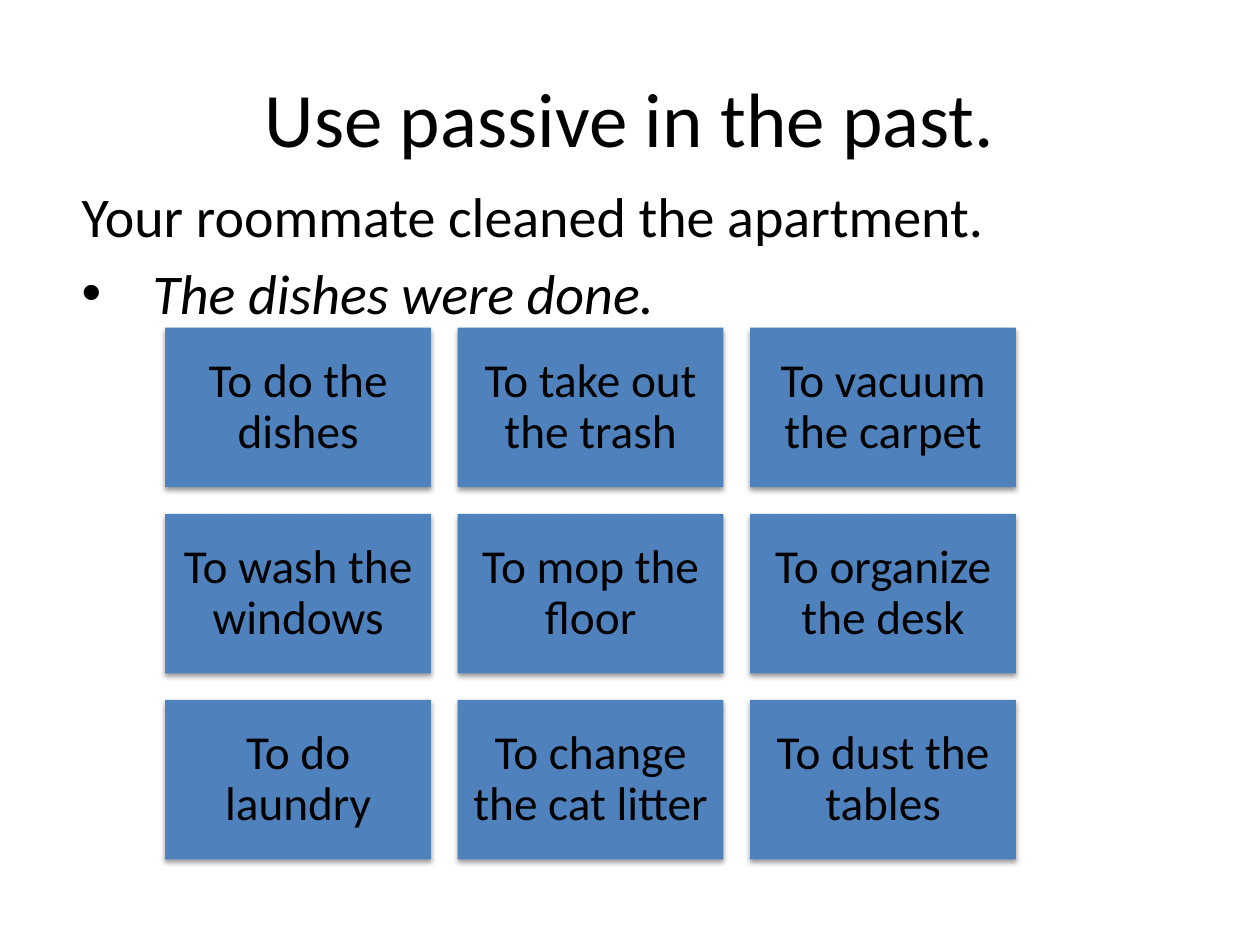
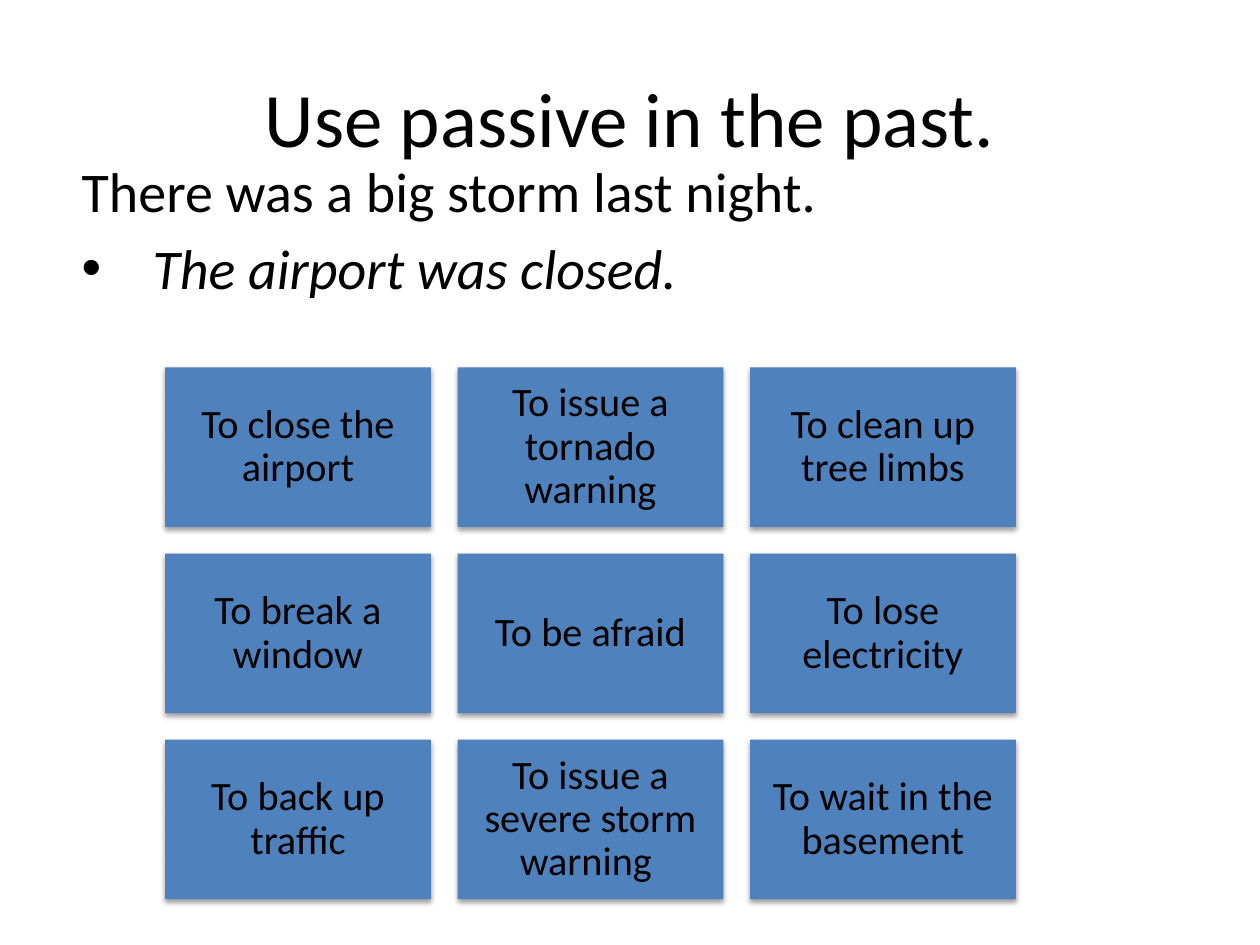
from dataclasses import dataclass

from lxml.etree import SubElement
from pptx import Presentation
from pptx.dml.color import RGBColor
from pptx.enum.shapes import MSO_SHAPE as Shape
from pptx.enum.text import MSO_ANCHOR as Anchor, PP_ALIGN as Align
from pptx.oxml.ns import qn
from pptx.util import Pt

TITLE = "Use passive in the past."

SLIDES = [
    {
        "prompt": "Your roommate cleaned the apartment.",
        "example": "The dishes were done.",
        "prompt_top": 100,
        "grid_top": 187.3,
        "tile_size": 27,
        "tile_inset": 8.1,
        "tasks": [
            "To do the dishes", "To take out the trash", "To vacuum the carpet",
            "To wash the windows", "To mop the floor", "To organize the desk",
            "To do laundry", "To change the cat litter", "To dust the tables",
        ],
    },
    {
        "prompt": "There was a big storm last night.",
        "example": "The airport was closed.",
        "prompt_top": 85.7,
        "grid_top": 210,
        "tile_size": 23,
        "tile_inset": 6.9,
        "tasks": [
            "To close the airport", "To issue a tornado warning", "To clean up tree limbs",
            "To break a window", "To be afraid", "To lose electricity",
            "To back up traffic", "To issue a severe storm warning ", "To wait in the basement",
        ],
    },
]


@dataclass(frozen=True)
class Theme:
    font: str = "Calibri"
    ink: RGBColor = RGBColor(0, 0, 0)
    tile: RGBColor = RGBColor(0x4F, 0x81, 0xBD)
    title_size: float = 44
    body_size: float = 32


THEME = Theme()
COLUMNS = 3
GRID_LEFT = 94.4
TILE_WIDTH, TILE_HEIGHT = 151.94, 91.17
GAP = TILE_WIDTH / 10
HANGING = 40.5


def add_span(para, words, size, italic=False):
    span = para.add_run()
    span.text = words
    span.font.name = THEME.font
    span.font.size = Pt(size)
    span.font.italic = italic
    span.font.color.rgb = THEME.ink


def add_box(page, left, top, width, height):
    box = page.shapes.add_textbox(Pt(left), Pt(top), Pt(width), Pt(height))
    box.text_frame.word_wrap = True
    return box.text_frame


def add_title(page):
    frame = add_box(page, 36, 21.6, 648, 90)
    frame.vertical_anchor = Anchor.MIDDLE
    para = frame.paragraphs[0]
    para.alignment = Align.CENTER
    add_span(para, TITLE, THEME.title_size)


def add_prompt(page, content):
    frame = add_box(page, 39.6, content["prompt_top"], 644.4, 87.8)
    prompt, example = frame.paragraphs[0], frame.add_paragraph()
    for para in (prompt, example):
        para.space_before = Pt(5.6)
        properties = para._p.get_or_add_pPr()
        properties.set("marL", str(Pt(HANGING)))
        properties.set("indent", str(-Pt(HANGING)))
    SubElement(example._p.pPr, qn("a:buFont"), typeface="Arial")
    SubElement(example._p.pPr, qn("a:buChar"), char="•")
    add_span(prompt, content["prompt"], THEME.body_size)
    add_span(example, content["example"], THEME.body_size, italic=True)


def add_shadow(shape):
    effects = SubElement(shape._element.spPr, qn("a:effectLst"))
    shadow = SubElement(effects, qn("a:outerShdw"), blurRad=str(Pt(3.1)),
                        dist=str(Pt(1.6)), dir="5400000", rotWithShape="0")
    color = SubElement(shadow, qn("a:srgbClr"), val=str(THEME.ink))
    SubElement(color, qn("a:alpha"), val="38000")


def add_tile(page, left, top, task, size, inset):
    tile = page.shapes.add_shape(
        Shape.RECTANGLE, Pt(left), Pt(top), Pt(TILE_WIDTH), Pt(TILE_HEIGHT))
    tile.fill.solid()
    tile.fill.fore_color.rgb = THEME.tile
    tile.line.fill.background()
    add_shadow(tile)
    frame = tile.text_frame
    frame.word_wrap = True
    frame.vertical_anchor = Anchor.MIDDLE
    frame.margin_left = frame.margin_right = Pt(inset)
    frame.margin_top = frame.margin_bottom = Pt(inset)
    para = frame.paragraphs[0]
    para.alignment = Align.CENTER
    para.line_spacing = 0.9
    add_span(para, task, size)


def add_grid(page, content):
    for index, task in enumerate(content["tasks"]):
        row, column = divmod(index, COLUMNS)
        left = GRID_LEFT + column * (TILE_WIDTH + GAP)
        top = content["grid_top"] + row * (TILE_HEIGHT + GAP)
        add_tile(page, left, top, task, content["tile_size"], content["tile_inset"])


def main():
    deck = Presentation()
    deck.slide_width, deck.slide_height = Pt(720), Pt(540)
    for content in SLIDES:
        page = deck.slides.add_slide(deck.slide_layouts[6])
        add_title(page)
        add_prompt(page, content)
        add_grid(page, content)
    deck.save("out.pptx")


if __name__ == "__main__":
    main()
